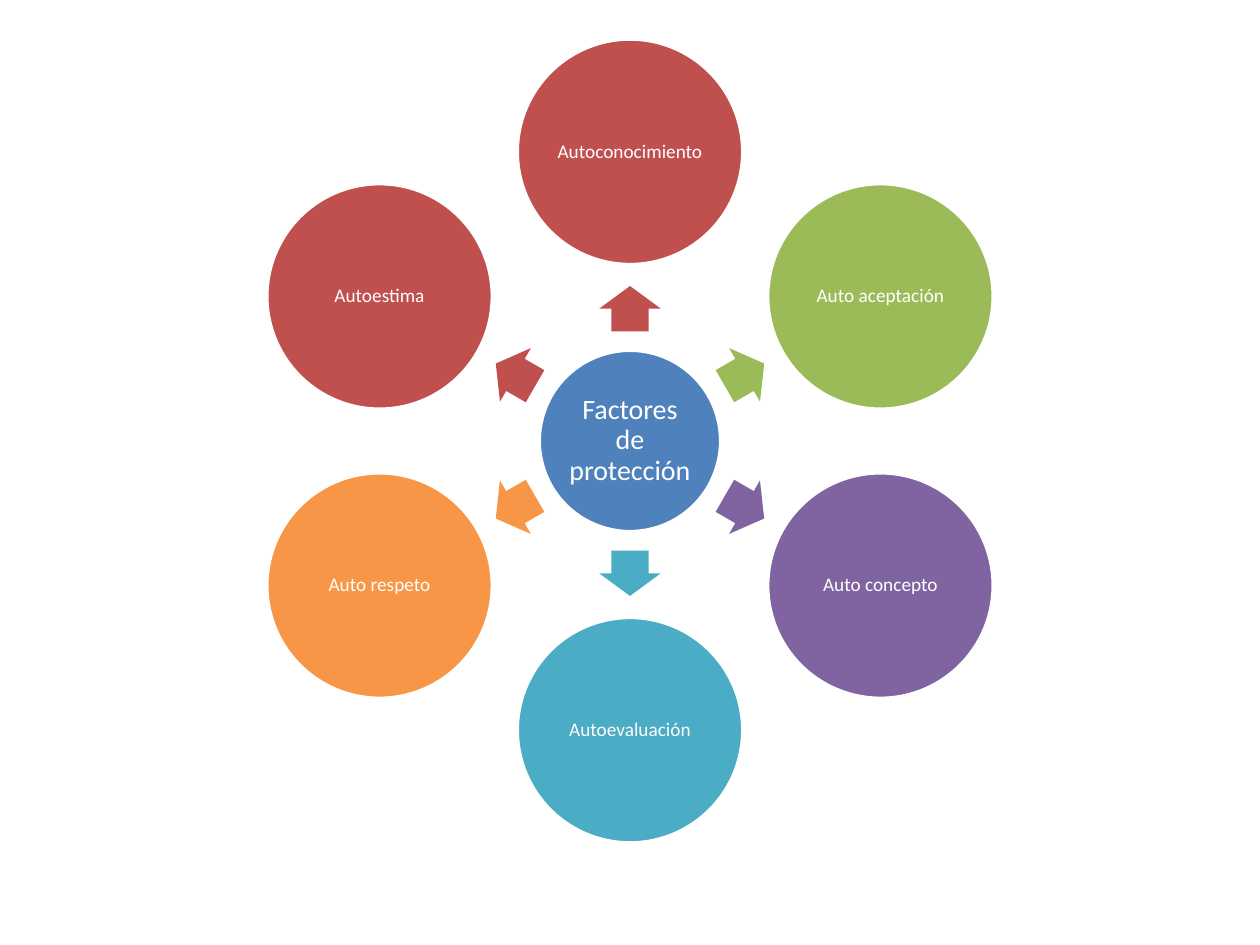
from math import cos, radians, sin

from pptx import Presentation
from pptx.dml.color import RGBColor
from pptx.enum.shapes import MSO_SHAPE as Shape
from pptx.enum.text import MSO_ANCHOR as Anchor, PP_ALIGN as Align
from pptx.util import Inches, Pt

WIDTH, HEIGHT = 10, 7.5
MID_X, MID_Y = WIDTH / 2, 3.5
HUB_SIZE, NODE_SIZE = 1.44, 1.79
NODE_REACH, ARROW_REACH = 2.295, 1.05
WHITE = "FFFFFF"
FACTORS = [
    ("Autoconocimiento", "C0504D"),
    ("Auto aceptación", "9BBB59"),
    ("Auto concepto", "8064A2"),
    ("Autoevaluación", "4BACC6"),
    ("Auto respeto", "F79646"),
    ("Autoestima", "C0504D"),
]


def paint(form, color):
    form.solid()
    form.fore_color.rgb = RGBColor.from_string(color)


def polar(reach, angle):
    """Point at a distance and clockwise angle from the hub."""
    turn = radians(angle)
    return MID_X + reach * cos(turn), MID_Y + reach * sin(turn)


def add_form(slide, kind, center, width, height, color):
    """Add a filled shape placed by its center."""
    x, y = center
    form = slide.shapes.add_shape(
        kind, Inches(x - width / 2), Inches(y - height / 2),
        Inches(width), Inches(height))
    form.shadow.inherit = False
    paint(form.fill, color)
    return form


def add_circle(slide, center, size, color, text, points):
    circle = add_form(slide, Shape.OVAL, center, size, size, color)
    paint(circle.line.fill, WHITE)
    circle.line.width = Pt(2)
    frame = circle.text_frame
    frame.word_wrap = True
    frame.vertical_anchor = Anchor.MIDDLE
    for side in ("left", "top", "right", "bottom"):
        setattr(frame, f"margin_{side}", Inches(0.02))
    para = frame.paragraphs[0]
    para.alignment = Align.CENTER
    para.line_spacing = 0.9
    run = para.add_run()
    run.text = text
    for name, value in {"name": "Calibri", "size": Pt(points)}.items():
        setattr(run.font, name, value)
    paint(run.font.fill, WHITE)


def add_arrow(slide, angle, color):
    arrow = add_form(slide, Shape.RIGHT_ARROW, polar(ARROW_REACH, angle),
                     0.36, 0.49, color)
    arrow.rotation = angle % 360
    arrow.adjustments[0] = 0.6
    arrow.adjustments[1] = 0.5
    arrow.line.fill.background()


def main():
    deck = Presentation()
    deck.slide_width, deck.slide_height = Inches(WIDTH), Inches(HEIGHT)
    slide = deck.slides.add_slide(deck.slide_layouts[6])
    add_circle(slide, (MID_X, MID_Y), HUB_SIZE, "4F81BD",
               "Factores de protección", 16)
    step = 360 / len(FACTORS)
    for i, (text, color) in enumerate(FACTORS):
        angle = i * step - 90
        add_arrow(slide, angle, color)
        add_circle(slide, polar(NODE_REACH, angle), NODE_SIZE, color, text, 11)
    deck.save("out.pptx")


if __name__ == "__main__":
    main()
